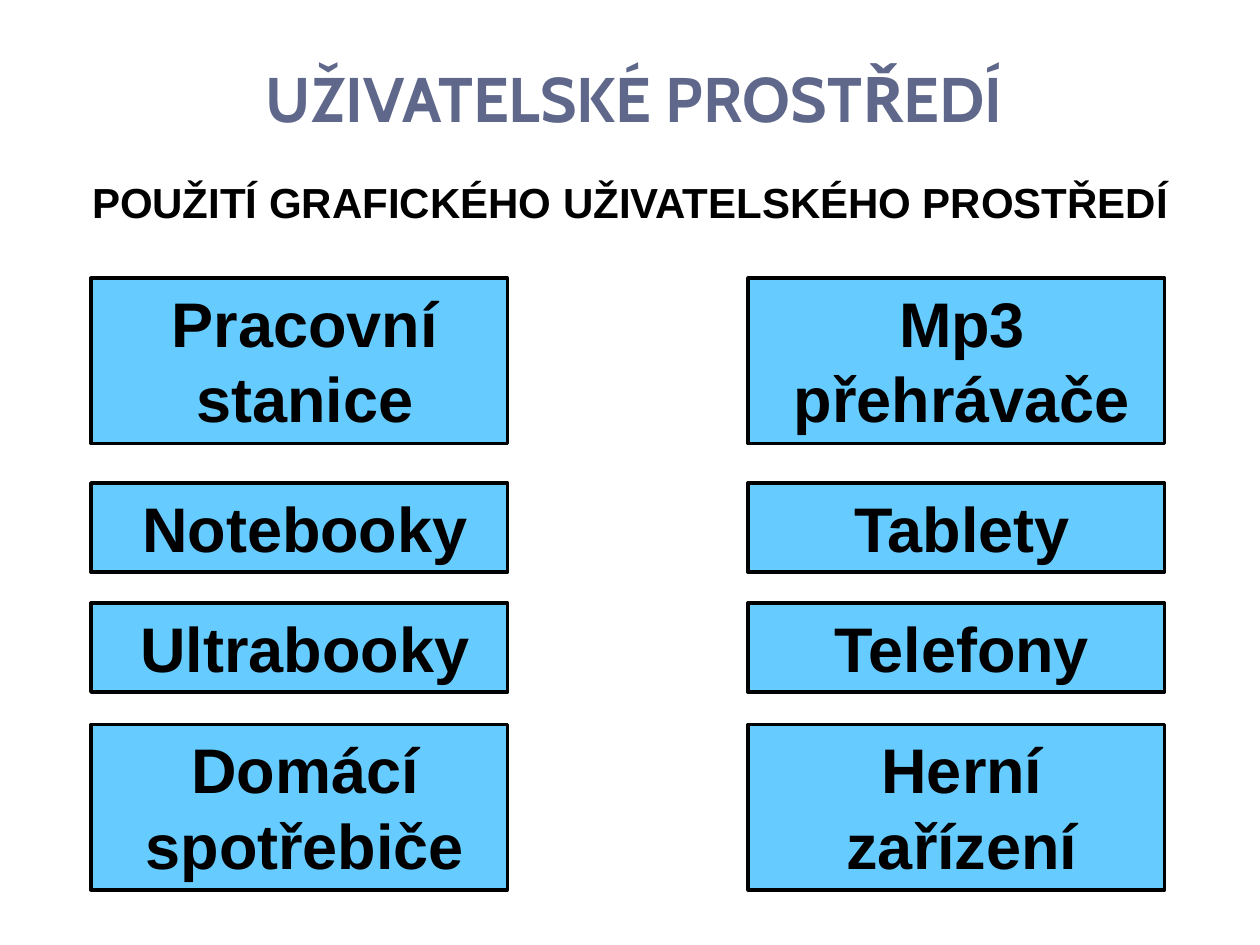
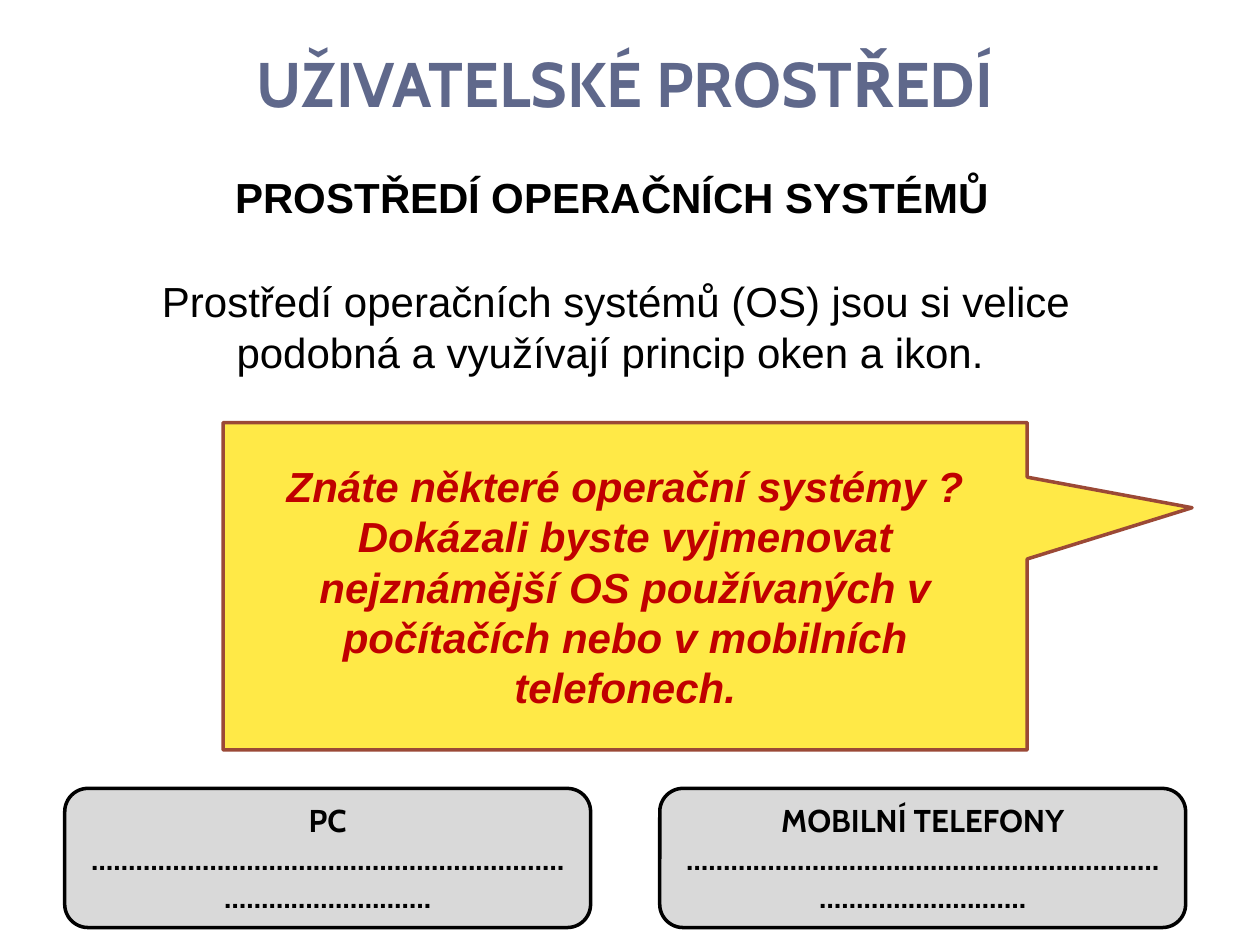
from dataclasses import dataclass

from pptx import Presentation
from pptx.dml.color import RGBColor
from pptx.enum.shapes import MSO_SHAPE
from pptx.enum.text import MSO_ANCHOR, MSO_AUTO_SIZE, PP_ALIGN
from pptx.shapes.autoshape import Shape
from pptx.slide import Slide
from pptx.util import Pt

BLACK = "000000"
TITLE_COLOR = "5F688B"
DEVICE_FILL = "66CCFF"
CALLOUT_FILL = "FFE947"
CALLOUT_LINE = "9B4936"
CALLOUT_TEXT = "C00000"
ANSWER_FILL = "D9D9D9"
INDENT = Pt(6.5)
LEFT_COLUMN, RIGHT_COLUMN, DEVICE_WIDTH = 52, 427.5, 238
DOTS = "…………………………….…………………………………………………."


@dataclass(frozen=True)
class Style:
    size: float
    font: str = "Arial"
    color: str = BLACK
    bold: bool = True
    italic: bool = False
    align: PP_ALIGN = PP_ALIGN.CENTER
    anchor: MSO_ANCHOR = MSO_ANCHOR.TOP
    indent: int = 0
    before: float = 0
    wrap: bool = True
    grow: bool = False


@dataclass(frozen=True)
class Box:
    left: float
    top: float
    width: float
    height: float

    def lengths(self) -> tuple[Pt, Pt, Pt, Pt]:
        return Pt(self.left), Pt(self.top), Pt(self.width), Pt(self.height)


@dataclass(frozen=True)
class DeviceRow:
    top: float
    height: float
    left_text: str
    right_text: str


@dataclass(frozen=True)
class Answer:
    left: float
    heading: str


TITLE = Style(36, "Cabin", TITLE_COLOR, anchor=MSO_ANCHOR.BOTTOM)
SUBTITLE = Style(24, align=PP_ALIGN.LEFT, wrap=False, grow=True)
DEVICE = Style(36, indent=INDENT, grow=True)
BODY = Style(24, bold=False, indent=INDENT, before=6)
QUESTION = Style(24, color=CALLOUT_TEXT, italic=True, anchor=MSO_ANCHOR.MIDDLE)
ANSWER = Style(18, "Cabin", anchor=MSO_ANCHOR.MIDDLE)

DEVICE_ROWS = [
    DeviceRow(159, 94.5, "Pracovní stanice", "Mp3 přehrávače"),
    DeviceRow(276, 51, "Notebooky", "Tablety"),
    DeviceRow(344.5, 51, "Ultrabooky", "Telefony"),
    DeviceRow(414, 94.5, "Domácí spotřebiče", "Herní zařízení"),
]
ANSWERS = [Answer(37, "PC"), Answer(377, "MOBILNÍ TELEFONY")]


def rgb(color: str) -> RGBColor:
    return RGBColor.from_string(color)


def write(shape: Shape, lines: list[str], style: Style) -> None:
    tf = shape.text_frame
    tf.word_wrap = style.wrap
    tf.auto_size = MSO_AUTO_SIZE.SHAPE_TO_FIT_TEXT if style.grow else MSO_AUTO_SIZE.NONE
    tf.vertical_anchor = style.anchor
    tf.text = "\n".join(lines)
    for p in tf.paragraphs:
        p.alignment = style.align
        p.space_before = Pt(style.before)
        p.font.size = Pt(style.size)
        p.font.name = style.font
        p.font.bold = style.bold
        p.font.italic = style.italic
        p.font.color.rgb = rgb(style.color)
        if style.indent:
            p._p.get_or_add_pPr().set("marL", str(style.indent))


def add_text(s: Slide, box: Box, text: str, style: Style) -> Shape:
    sp = s.shapes.add_textbox(*box.lengths())
    write(sp, [text], style)
    return sp


def add_panel(s: Slide, kind: MSO_SHAPE, box: Box, fill: str, line: str,
              lines: list[str], style: Style) -> Shape:
    sp = s.shapes.add_shape(kind, *box.lengths())
    sp.shadow.inherit = False
    sp.fill.solid()
    sp.fill.fore_color.rgb = rgb(fill)
    sp.line.color.rgb = rgb(line)
    sp.line.width = Pt(2)
    write(sp, lines, style)
    return sp


def add_slide(prs: Presentation, title_left: float, title_top: float,
              subtitle_box: Box, subtitle: str) -> Slide:
    s = prs.slides.add_slide(prs.slide_layouts[6])
    title = add_text(s, Box(title_left, title_top, 663, 49), "UŽIVATELSKÉ PROSTŘEDÍ", TITLE)
    title.text_frame.paragraphs[0].line_spacing = Pt(20)
    add_text(s, subtitle_box, subtitle, SUBTITLE)
    return s


def build_devices(prs: Presentation) -> None:
    s = add_slide(prs, 31, 31.5, Box(45.5, 97.5, 635, 36),
                  "POUŽITÍ GRAFICKÉHO UŽIVATELSKÉHO PROSTŘEDÍ")
    for row in DEVICE_ROWS:
        for left, text in ((LEFT_COLUMN, row.left_text), (RIGHT_COLUMN, row.right_text)):
            add_panel(s, MSO_SHAPE.RECTANGLE, Box(left, row.top, DEVICE_WIDTH, row.height),
                      DEVICE_FILL, BLACK, [text], DEVICE)


def build_systems(prs: Presentation) -> None:
    s = add_slide(prs, 25.5, 23, Box(127.5, 94.5, 449, 36), "PROSTŘEDÍ OPERAČNÍCH SYSTÉMŮ")
    add_text(s, Box(37, 154, 623.5, 164),
             "Prostředí operačních systémů (OS) jsou si velice podobná "
             "a využívají princip oken a ikon. ", BODY)
    callout = add_panel(
        s, MSO_SHAPE.RECTANGULAR_CALLOUT, Box(127.5, 241.5, 459.5, 187),
        CALLOUT_FILL, CALLOUT_LINE,
        ["Znáte některé operační systémy ? Dokázali byste vyjmenovat nejznámější OS "
         "používaných v počítačích nebo v mobilních telefonech."], QUESTION)
    callout.adjustments[0] = 0.705
    callout.adjustments[1] = -0.24
    for answer in ANSWERS:
        add_panel(s, MSO_SHAPE.ROUNDED_RECTANGLE, Box(answer.left, 450.5, 300.5, 79.5),
                  ANSWER_FILL, BLACK, [answer.heading, DOTS], ANSWER)


def main() -> None:
    prs = Presentation()
    prs.slide_width, prs.slide_height = Pt(720), Pt(540)
    build_devices(prs)
    build_systems(prs)
    prs.save("out.pptx")


if __name__ == "__main__":
    main()
